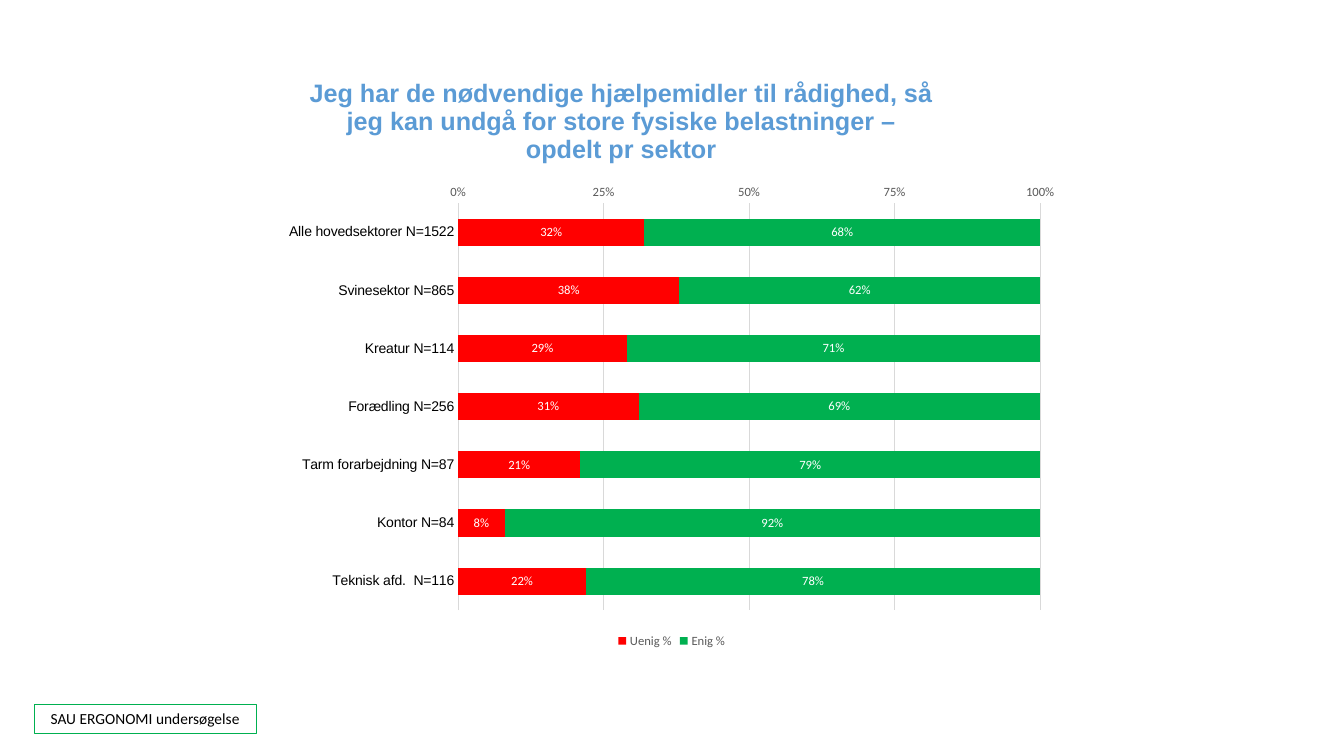
from lxml import etree
from pptx import Presentation
from pptx.chart.data import CategoryChartData
from pptx.dml.color import RGBColor
from pptx.enum.chart import XL_CHART_TYPE, XL_LABEL_POSITION, XL_LEGEND_POSITION, XL_TICK_MARK
from pptx.enum.shapes import MSO_SHAPE
from pptx.enum.text import MSO_ANCHOR, PP_ALIGN
from pptx.oxml.ns import qn
from pptx.util import Pt

BAR_STACKED = XL_CHART_TYPE.BAR_STACKED
LABEL_CENTER = XL_LABEL_POSITION.CENTER
LEGEND_BOTTOM = XL_LEGEND_POSITION.BOTTOM
NO_TICK = XL_TICK_MARK.NONE
RECTANGLE = MSO_SHAPE.RECTANGLE
MIDDLE = MSO_ANCHOR.MIDDLE
CENTER = PP_ALIGN.CENTER

RED, GREEN, BLUE = "FF0000", "00B050", "5B9BD5"
BLACK, WHITE, GREY, GRID = "000000", "FFFFFF", "595959", "D9D9D9"

TITLE = ("Jeg har de nødvendige hjælpemidler til rådighed, så jeg kan undgå "
         "for store fysiske belastninger – opdelt pr sektor")
SECTORS = ["Alle hovedsektorer N=1522", "Svinesektor N=865", "Kreatur N=114",
           "Forædling N=256", "Tarm forarbejdning N=87", "Kontor N=84",
           "Teknisk afd.  N=116"]
ANSWERS = [
    ("Uenig %", RED, [0.32, 0.38, 0.29, 0.31, 0.21, 0.08, 0.22]),
    ("Enig %", GREEN, [0.68, 0.62, 0.71, 0.69, 0.79, 0.92, 0.78]),
]


def rgb(value):
    return RGBColor.from_string(value)


def set_attrs(target, values):
    for name, value in values.items():
        setattr(target, name, value)


def style_font(font, size, color, name="Calibri", bold=False):
    set_attrs(font, {"size": Pt(size), "name": name, "bold": bold})
    font.color.rgb = rgb(color)


def style_line(line, color, width):
    line.color.rgb = rgb(color)
    line.width = Pt(width)


def place_part(follower, values):
    """Put a manual layout in front of the given chart element."""
    parent = follower.getparent()
    for old in parent.findall(qn("c:layout")):
        parent.remove(old)
    layout = etree.Element(qn("c:layout"))
    manual = etree.SubElement(layout, qn("c:manualLayout"))
    for tag, value in values.items():
        etree.SubElement(manual, qn(f"c:{tag}")).set("val", str(value))
    follower.addprevious(layout)


def add_sector_chart(slide, left, top, width, height):
    data = CategoryChartData(number_format="0%")
    data.categories = SECTORS
    for name, _, shares in ANSWERS:
        data.add_series(name, shares)
    frame = slide.shapes.add_chart(
        BAR_STACKED, Pt(left), Pt(top), Pt(width), Pt(height), data)
    chart = frame.chart
    style_font(chart.font, 10, BLACK)

    # Title
    tf = chart.chart_title.text_frame
    tf.text = TITLE
    style_font(tf.paragraphs[0].runs[0].font, 18, BLUE, "Arial", True)
    title = chart.chart_title._element
    place_part(title.find(qn("c:overlay")),
               {"xMode": "edge", "yMode": "edge", "x": 0.04, "y": 0.03})

    # Bars and their labels
    plot = chart.plots[0]
    set_attrs(plot, {"gap_width": 115, "overlap": 100, "vary_by_categories": False})
    for series, (_, color, _) in zip(plot.series, ANSWERS):
        series.format.fill.solid()
        series.format.fill.fore_color.rgb = rgb(color)
        labels = series.data_labels
        set_attrs(labels, {"show_value": True, "position": LABEL_CENTER,
                           "number_format": "0%", "number_format_is_linked": False})
        style_font(labels.font, 9, WHITE)
    place_part(plot._element,
               {"layoutTarget": "inner", "xMode": "edge", "yMode": "edge",
                "x": 0.232, "y": 0.25, "w": 0.73, "h": 0.68})

    # Axes
    no_ticks = {"major_tick_mark": NO_TICK, "minor_tick_mark": NO_TICK}
    sectors = chart.category_axis
    set_attrs(sectors, {**no_ticks, "reverse_order": True})
    style_font(sectors.tick_labels.font, 10, BLACK, "Arial")
    style_line(sectors.format.line, GRID, 0.75)
    shares = chart.value_axis
    set_attrs(shares, {**no_ticks, "minimum_scale": 0, "maximum_scale": 1,
                       "major_unit": 0.25, "has_major_gridlines": True})
    set_attrs(shares.tick_labels, {"number_format": "0%",
                                   "number_format_is_linked": False})
    style_font(shares.tick_labels.font, 9, GREY)
    shares.format.line.fill.background()
    style_line(shares.major_gridlines.format.line, GRID, 0.75)

    # Legend
    chart.has_legend = True
    set_attrs(chart.legend, {"position": LEGEND_BOTTOM, "include_in_layout": False})
    style_font(chart.legend.font, 9, GREY)


def add_survey_tag(slide, left, top, width, height):
    sp = slide.shapes.add_shape(RECTANGLE, Pt(left), Pt(top), Pt(width), Pt(height))
    sp.shadow.inherit = False
    sp.fill.background()
    style_line(sp.line, GREEN, 0.25)
    tf = sp.text_frame
    set_attrs(tf, {"word_wrap": True, "vertical_anchor": MIDDLE})
    p = tf.paragraphs[0]
    p.alignment = CENTER
    r = p.add_run()
    r.text = "SAU ERGONOMI undersøgelse"
    style_font(r.font, 11, BLACK)


def main():
    prs = Presentation()
    set_attrs(prs, {"slide_width": Pt(960), "slide_height": Pt(540)})
    slide = prs.slides.add_slide(prs.slide_layouts[6])
    add_survey_tag(slide, 24.5, 503.3, 158.4, 20.2)
    add_sector_chart(slide, 195.1, 38.2, 569.5, 427.7)
    prs.save("out.pptx")


if __name__ == "__main__":
    main()
